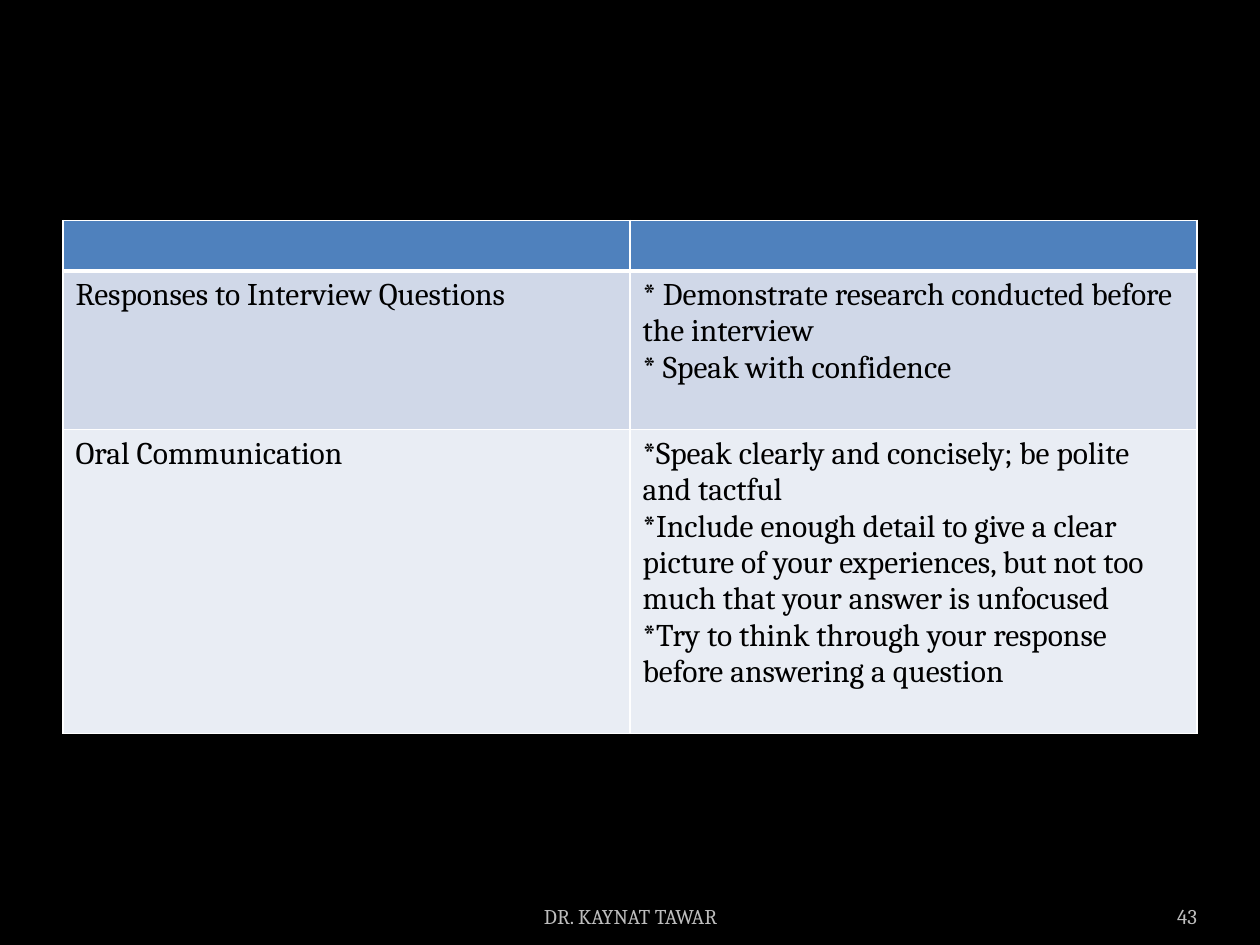
from pptx import Presentation
from pptx.dml.color import RGBColor as RGB
from pptx.enum.text import MSO_ANCHOR as Anchor, PP_ALIGN as Align
from pptx.oxml import parse_xml
from pptx.oxml.ns import nsdecls
from pptx.util import Inches, Pt

HUES = {"back": "000000", "head": "4F81BD", "odd": "D0D8E8", "even": "E9EDF4",
        "text": "000000", "rule": "FFFFFF", "foot": "BDBDBD"}


def style(par, size, hue):
    par.font.name = "Cambria"
    par.font.size = Pt(size)
    par.font.color.rgb = RGB.from_string(HUES[hue])


def border(cell, side, width):
    cell._tc.get_or_add_tcPr().append(parse_xml(
        f'<a:ln{side} {nsdecls("a")} w="{Pt(width)}"><a:solidFill>'
        f'<a:srgbClr val="{HUES["rule"]}"/></a:solidFill></a:ln{side}>'))


deck = Presentation()
deck.slide_width, deck.slide_height = Inches(10), Inches(7.5)
slide = deck.slides.add_slide(deck.slide_layouts[6])
slide.background.fill.solid()
slide.background.fill.fore_color.rgb = RGB.from_string(HUES["back"])

# Interview advice: fill, row height, texts
rows = [
    ("head", 0.4, ["", ""]),
    ("odd", 1.26, ["Responses to Interview Questions",
                   "* Demonstrate research conducted before the interview\n"
                   "* Speak with confidence"]),
    ("even", 2.41, ["Oral Communication",
                    "*Speak clearly and concisely; be polite and tactful\n"
                    "*Include enough detail to give a clear picture of your "
                    "experiences, but not too much that your answer is unfocused\n"
                    "*Try to think through your response before answering a question"]),
]
table = slide.shapes.add_table(len(rows), 2, Inches(0.5), Inches(1.75),
                               Inches(9), Inches(4.07)).table
for r, (hue, height, texts) in enumerate(rows):
    table.rows[r].height = Inches(height)
    for c, text in enumerate(texts):
        cell = table.cell(r, c)
        cell.text = text
        for par in cell.text_frame.paragraphs:
            style(par, 18, "text")
        for side in "LRTB":
            thick = (r, side) in [(0, "B"), (1, "T")]
            border(cell, side, 3 if thick else 1)
        cell.fill.solid()
        cell.fill.fore_color.rgb = RGB.from_string(HUES[hue])

# Page number and footer
for text, left, width, inset, align in [
        ("43", 8.67, 0.83, 0, Align.RIGHT),
        ("DR. KAYNAT TAWAR", 3.42, 3.17, 0.1, Align.CENTER)]:
    box = slide.shapes.add_textbox(Inches(left), Inches(7.02), Inches(width), Inches(0.4))
    frame = box.text_frame
    frame.word_wrap = True
    frame.vertical_anchor = Anchor.BOTTOM
    frame.margin_left = frame.margin_right = Inches(inset)
    frame.text = text
    par = frame.paragraphs[0]
    par.alignment = align
    style(par, 12, "foot")

deck.save("out.pptx")
